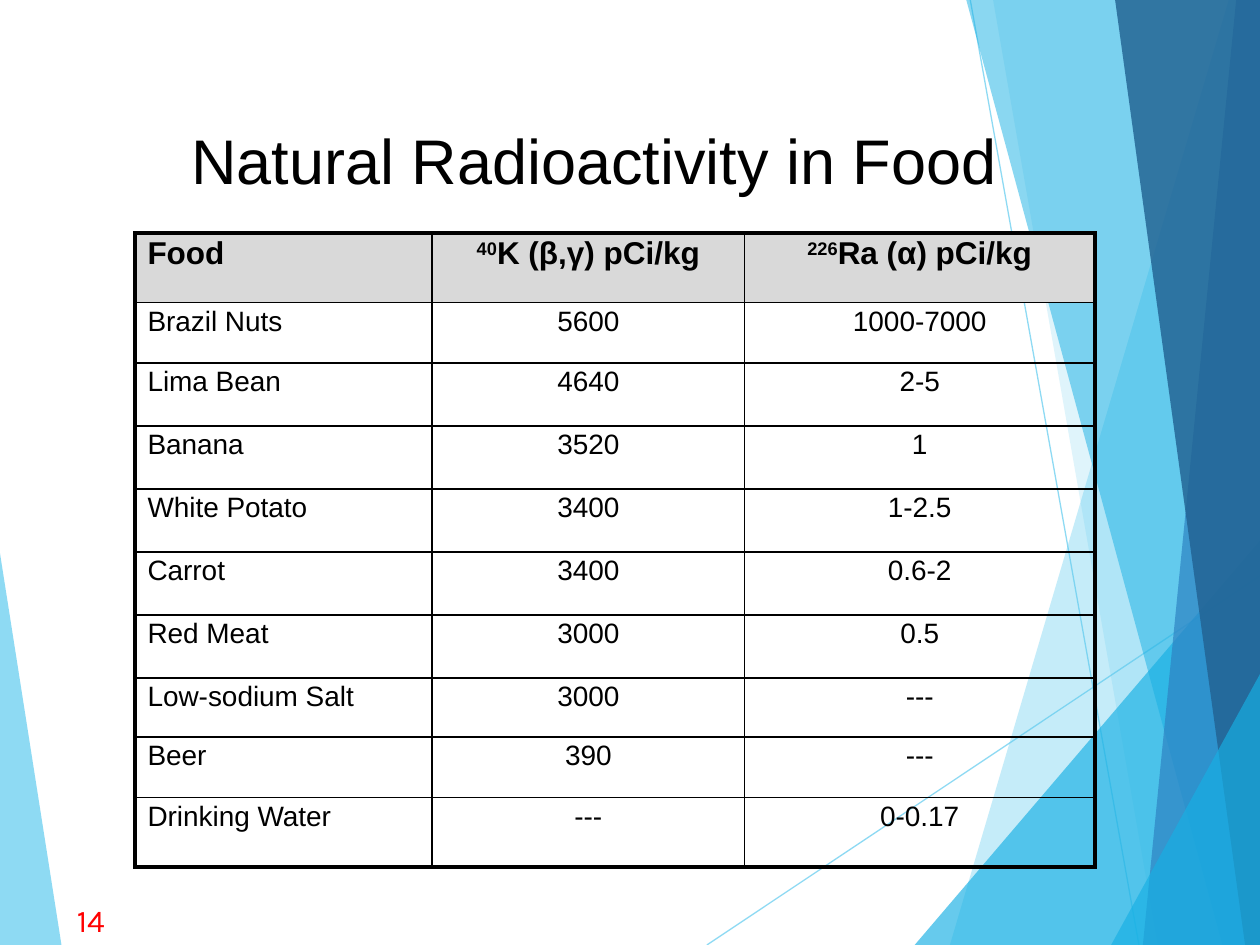
from typing import NamedTuple

import pptx
import pptx.dml.color
import pptx.enum.shapes
import pptx.enum.text
import pptx.oxml
import pptx.oxml.ns
import pptx.util
from pptx.util import Cm, Pt

WIDTH, HEIGHT = 25.4, 19.05
CENTER = pptx.enum.text.PP_ALIGN.CENTER
LEFT = pptx.enum.text.PP_ALIGN.LEFT
BLACK = "000000"
THIN, THICK = 1, 2.25


class Facet(NamedTuple):
    color: str
    opacity: int
    points: list[tuple[float, float]]


class Ray(NamedTuple):
    start: tuple[float, float]
    end: tuple[float, float]


class Food(NamedTuple):
    name: str
    potassium: str
    radium: str
    height: float


LEFT_FACET = Facet("5FCBEF", 70, [(0, 11.15), (1.24, HEIGHT), (0, HEIGHT)])
RAYS = [
    Ray((14.25, HEIGHT), (WIDTH, 11.61)),
    Ray((19.56, 0), (22.96, HEIGHT)),
]
RIGHT_FACETS = [
    Facet("5FCBEF", 36, [(24.77, 0), (19.15, HEIGHT), (WIDTH, HEIGHT), (WIDTH, 0)]),
    Facet("5FCBEF", 20, [(20.02, 0), (23.34, HEIGHT), (WIDTH, HEIGHT), (WIDTH, 0)]),
    Facet("17B0E4", 66, [(18.44, HEIGHT), (WIDTH, 10.9), (WIDTH, HEIGHT)]),
    Facet("17B0E4", 50, [(19.48, 0), (24.64, HEIGHT), (WIDTH, HEIGHT), (WIDTH, 0)]),
    Facet("2E83C3", 70, [(24.92, 0), (23.04, HEIGHT), (WIDTH, HEIGHT), (WIDTH, 0)]),
    Facet("226292", 82, [(22.48, 0), (25.1, HEIGHT), (WIDTH, HEIGHT), (WIDTH, 0)]),
    Facet("17B0E4", 66, [(22.4, HEIGHT), (WIDTH, 13.59), (WIDTH, HEIGHT)]),
]

COLUMN_WIDTHS = [5.99, 6.3, 7.06]
HEADER_HEIGHT = 1.4
# Each heading is a superscript mass number and the text after it.
HEADINGS = [("", "Food"), ("40", "K (β,γ) pCi/kg"), ("226", "Ra (α) pCi/kg")]
FOODS = [
    Food("Brazil Nuts", "5600", "1000-7000", 1.22),
    Food("Lima Bean", "4640", "2-5", 1.27),
    Food("Banana", "3520", "1", 1.27),
    Food("White Potato", "3400", "1-2.5", 1.27),
    Food("Carrot", "3400", "0.6-2", 1.27),
    Food("Red Meat", "3000", "0.5", 1.27),
    Food("Low-sodium Salt", "3000", "---", 1.19),
    Food("Beer", "390", "---", 1.22),
    Food("Drinking Water", "---", "0-0.17", 1.4),
]


def rgb(color: str) -> pptx.dml.color.RGBColor:
    return pptx.dml.color.RGBColor.from_string(color)


def set_opacity(element, percent: int) -> None:
    """Make the first colour found under the element partly transparent."""
    color = next(element.iter(pptx.oxml.ns.qn("a:srgbClr")))
    pptx.oxml.ns.qn("a:alpha")
    alpha = color.makeelement(pptx.oxml.ns.qn("a:alpha"), {"val": str(percent * 1000)})
    color.append(alpha)


def draw_facet(page, facet: Facet) -> None:
    points = [(Cm(x), Cm(y)) for x, y in facet.points]
    builder = page.shapes.build_freeform(*points[0])
    builder.add_line_segments(points[1:], close=True)
    shape = builder.convert_to_shape()
    shape.shadow.inherit = False
    shape.fill.solid()
    shape.fill.fore_color.rgb = rgb(facet.color)
    set_opacity(shape.fill._xPr, facet.opacity)
    shape.line.fill.background()


def draw_ray(page, ray: Ray) -> None:
    line = page.shapes.add_connector(
        pptx.enum.shapes.MSO_CONNECTOR.STRAIGHT,
        *(Cm(value) for value in (*ray.start, *ray.end)),
    )
    line.line.width = Pt(0.75)
    line.line.color.rgb = rgb("5FCBEF")
    properties = line._element.spPr
    set_opacity(properties, 70)
    properties.append(properties.makeelement(pptx.oxml.ns.qn("a:effectLst"), {}))


def style_paragraph(para, size: float, font: str, color: str, align=LEFT) -> None:
    para.alignment = align
    para.font.size = Pt(size)
    para.font.name = font
    para.font.color.rgb = rgb(color)


def add_text(page, text: str, place: tuple[float, float, float, float],
             size: float, font: str, color: str, align=LEFT):
    box = page.shapes.add_textbox(*(Cm(value) for value in place))
    box.text_frame.word_wrap = True
    para = box.text_frame.paragraphs[0]
    para.text = text
    style_paragraph(para, size, font, color, align)
    return box


def set_borders(cell, widths: dict[str, float]) -> None:
    """Draw black cell edges; widths maps L, R, T, B to points, in that order."""
    properties = cell._tc.get_or_add_tcPr()
    for index, (side, width) in enumerate(widths.items()):
        edge = pptx.oxml.parse_xml(
            f'<a:ln{side} {pptx.oxml.ns.nsdecls("a")} w="{Pt(width)}">'
            f'<a:solidFill><a:srgbClr val="{BLACK}"/></a:solidFill></a:ln{side}>'
        )
        properties.insert(index, edge)


def draw_table(page) -> None:
    heights = [HEADER_HEIGHT] + [food.height for food in FOODS]
    last_row, last_column = len(heights) - 1, len(COLUMN_WIDTHS) - 1
    table = page.shapes.add_table(
        len(heights), len(COLUMN_WIDTHS), Cm(2.72), Cm(4.7),
        Cm(sum(COLUMN_WIDTHS)), Cm(sum(heights)),
    ).table
    table.horz_banding = False
    for column, width in zip(table.columns, COLUMN_WIDTHS):
        column.width = Cm(width)
    rows = [HEADINGS] + [
        [("", food.name), ("", food.potassium), ("", food.radium)] for food in FOODS
    ]
    for row_index, (row, height) in enumerate(zip(rows, heights)):
        table.rows[row_index].height = Cm(height)
        is_header = row_index == 0
        for column_index, (mass_number, text) in enumerate(row):
            cell = table.cell(row_index, column_index)
            para = cell.text_frame.paragraphs[0]
            if mass_number:
                span = para.add_run()
                span.text = mass_number
                span._r.get_or_add_rPr().set("baseline", "30000")
            para.add_run().text = text
            style_paragraph(para, 18 if is_header else 16, "Arial", BLACK,
                            CENTER if column_index else LEFT)
            para.font.bold = is_header
            para.line_spacing = 0.9
            if is_header:
                cell.fill.solid()
                cell.fill.fore_color.rgb = rgb("D9D9D9")
            else:
                cell.fill.background()
            set_borders(cell, {
                "L": THICK if column_index == 0 else THIN,
                "R": THICK if column_index == last_column else THIN,
                "T": THICK if is_header else THIN,
                "B": THICK if row_index == last_row else THIN,
            })


def main() -> None:
    deck = pptx.Presentation()
    deck.slide_width, deck.slide_height = Cm(WIDTH), Cm(HEIGHT)
    page = deck.slides.add_slide(deck.slide_layouts[6])
    draw_facet(page, LEFT_FACET)
    for ray in RAYS:
        draw_ray(page, ray)
    for facet in RIGHT_FACETS:
        draw_facet(page, facet)
    title = add_text(page, "Natural Radioactivity in Food",
                     (3.15, 2.18, 17.65, 1.78), 36, "Arial", BLACK, CENTER)
    title.text_frame.margin_top = Cm(0.28)
    draw_table(page)
    add_text(page, "14", (1.3, 18.03, 1.42, 1.02), 18, "Karla", "FF0000")
    deck.save("out.pptx")


if __name__ == "__main__":
    main()
